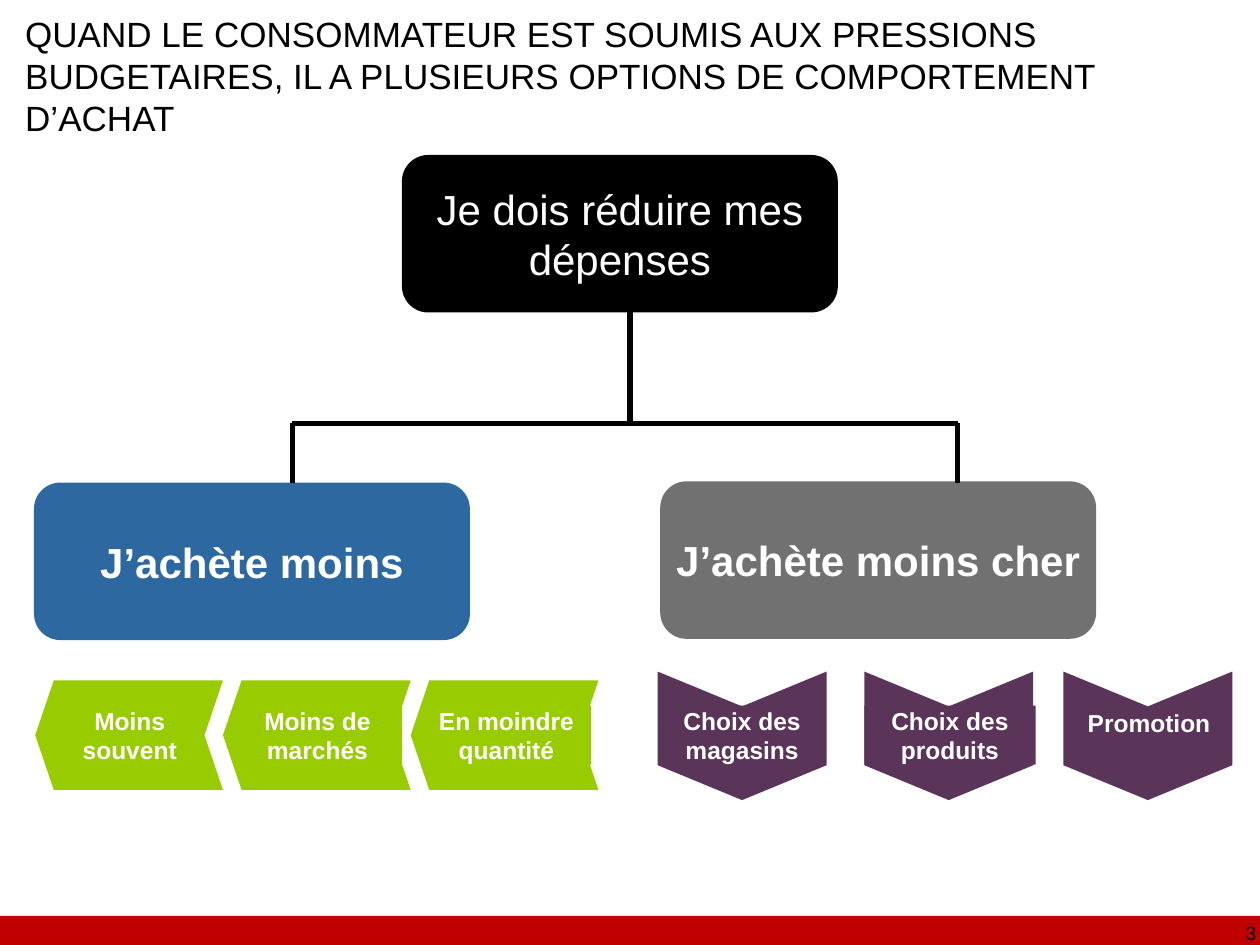
from dataclasses import dataclass

from lxml.etree import SubElement
from pptx import Presentation
from pptx.dml.color import RGBColor
from pptx.enum.shapes import MSO_CONNECTOR, MSO_SHAPE
from pptx.enum.text import MSO_ANCHOR, MSO_AUTO_SIZE, PP_ALIGN
from pptx.oxml.ns import qn
from pptx.util import Inches, Pt


@dataclass(frozen=True)
class Theme:
    font: str = "Arial"
    black: str = "000000"
    white: str = "FFFFFF"
    red: str = "C00000"
    blue: str = "2E68A0"
    gray: str = "717171"
    green: str = "99CC00"
    purple: str = "5A3459"
    title_size: int = 20
    box_size: int = 24
    option_size: int = 14
    number_size: int = 11
    line_width: int = 3


class SlideBuilder:
    def __init__(self, slide, theme):
        self.slide = slide
        self.theme = theme

    def fill_text(self, shape, text, size, color, bold=False,
                  alignment=PP_ALIGN.CENTER, inset=0, **frame_format):
        frame = shape.text_frame
        values = {"word_wrap": True, "vertical_anchor": MSO_ANCHOR.TOP}
        for side in ("left", "top", "right", "bottom"):
            values[f"margin_{side}"] = Inches(inset)
        for name, value in (values | frame_format).items():
            setattr(frame, name, value)
        paragraph = frame.paragraphs[0]
        paragraph.alignment = alignment
        run = paragraph.add_run()
        run.text = text
        font_format = {"name": self.theme.font, "size": Pt(size), "bold": bold}
        for name, value in font_format.items():
            setattr(run.font, name, value)
        run.font.color.rgb = RGBColor.from_string(color)

    def shape(self, kind, bounds, color, adjustment=None, parent=None):
        shapes = (parent or self.slide).shapes
        shape = shapes.add_shape(kind, *map(Inches, bounds))
        shape.shadow.inherit = False
        shape.fill.solid()
        shape.fill.fore_color.rgb = RGBColor.from_string(color)
        shape.line.fill.background()
        if adjustment is not None:
            shape.adjustments[0] = adjustment
        return shape

    def text(self, bounds, text, size, **text_format):
        box = self.slide.shapes.add_textbox(*map(Inches, bounds))
        self.fill_text(box, text, size, self.theme.black, **text_format)

    def box(self, left, top, text, color, bold=True):
        shape = self.shape(MSO_SHAPE.ROUNDED_RECTANGLE,
                           (left, top, 3.46, 1.25), color, 0.167)
        self.fill_text(shape, text, self.theme.box_size, self.theme.white, bold,
                       vertical_anchor=MSO_ANCHOR.MIDDLE)

    def option(self, chevron_bounds, label_bounds, text, color, adjustment, downward):
        """Group a chevron, pointing left or down, with its label."""
        group = self.slide.shapes.add_group_shape()
        chevron = self.shape(MSO_SHAPE.CHEVRON, chevron_bounds, color, adjustment, group)
        if downward:
            chevron.rotation = 90
        else:
            chevron._element.spPr.find(qn("a:xfrm")).set("flipH", "1")
        label = self.shape(MSO_SHAPE.RECTANGLE, label_bounds, color, parent=group)
        self.fill_text(label, text, self.theme.option_size, self.theme.white, True,
                       auto_size=MSO_AUTO_SIZE.SHAPE_TO_FIT_TEXT)

    def line(self, start, end):
        connector = self.slide.shapes.add_connector(
            MSO_CONNECTOR.STRAIGHT, *map(Inches, start + end))
        connector.line.color.rgb = RGBColor.from_string(self.theme.black)
        connector.line.width = Pt(self.theme.line_width)
        SubElement(connector._element.spPr, qn("a:effectLst"))


def main():
    presentation = Presentation()
    presentation.slide_width = Inches(10)
    presentation.slide_height = Inches(7.5)
    theme = Theme()
    slide = presentation.slides.add_slide(presentation.slide_layouts[6])
    builder = SlideBuilder(slide, theme)

    builder.shape(MSO_SHAPE.RECTANGLE, (0, 7.27, 10, 0.23), theme.red)
    builder.text((7.74, 7.14, 2.33, 0.52), "3", theme.number_size, inset=0.1,
                 alignment=PP_ALIGN.RIGHT, vertical_anchor=MSO_ANCHOR.MIDDLE)
    builder.text(
        (0.2, 0.1, 9.61, 1.06),
        "QUAND LE CONSOMMATEUR EST SOUMIS AUX PRESSIONS BUDGETAIRES, "
        "IL A PLUSIEURS OPTIONS DE COMPORTEMENT D’ACHAT",
        theme.title_size, alignment=PP_ALIGN.LEFT)

    builder.box(3.19, 1.23, "Je dois réduire mes dépenses", theme.black, bold=False)
    builder.box(0.27, 3.83, "J’achète moins", theme.blue)
    builder.box(5.24, 3.82, "J’achète moins cher", theme.gray)

    buy_less = [
        ("Moins souvent", 0.5, 1.06),
        ("Moins de marchés", 1.85, 1.34),
        ("En moindre quantité", 3.35, 1.34),
    ]
    chevron_width = 1.49
    for index, (text, left, width) in enumerate(buy_less):
        builder.option((0.28 + chevron_width * index, 5.4, chevron_width, 0.87),
                       (left, 5.6, width, 0.47),
                       text, theme.green, 0.169, downward=False)

    buy_cheaper = [
        ("Choix des magasins", 5.38, (5.24, 5.6, 1.3, 0.47)),
        ("Choix des produits", 7.02, (6.86, 5.6, 1.36, 0.47)),
        ("Promotion", 8.6, (8.49, 5.62, 1.26, 0.23)),
    ]
    for text, left, label_bounds in buy_cheaper:
        builder.option((left, 5.17, 1.02, 1.34), label_bounds,
                       text, theme.purple, 0.271, downward=True)

    trunk, left_branch, right_branch = 5, 2.32, 7.6
    fork, branch_end = 3.36, 3.83
    builder.line((trunk, 2.41), (trunk, fork))
    for branch in (left_branch, right_branch):
        builder.line((branch, branch_end), (branch, fork))
    builder.line((left_branch, fork), (right_branch, fork))

    presentation.save("out.pptx")


if __name__ == "__main__":
    main()
